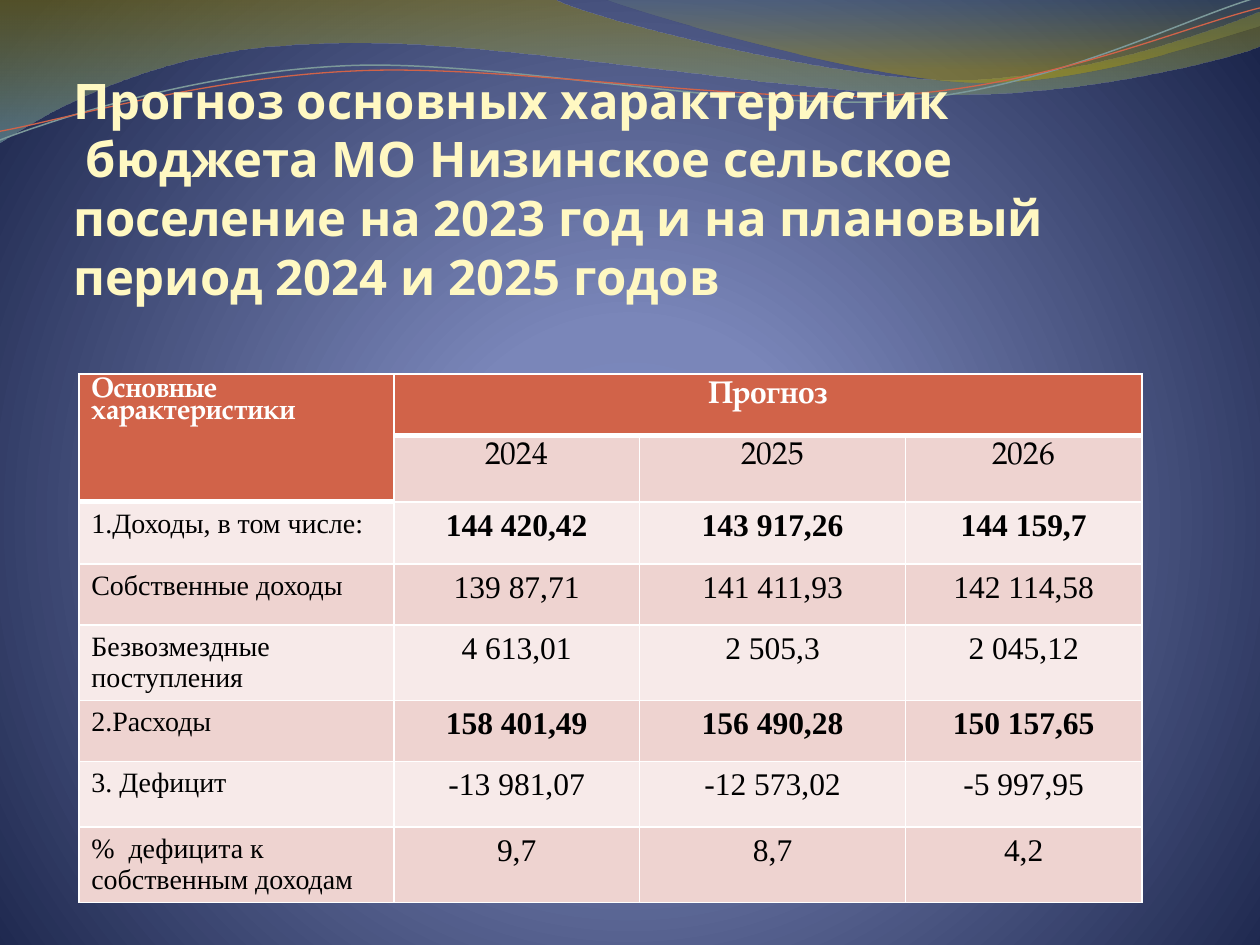
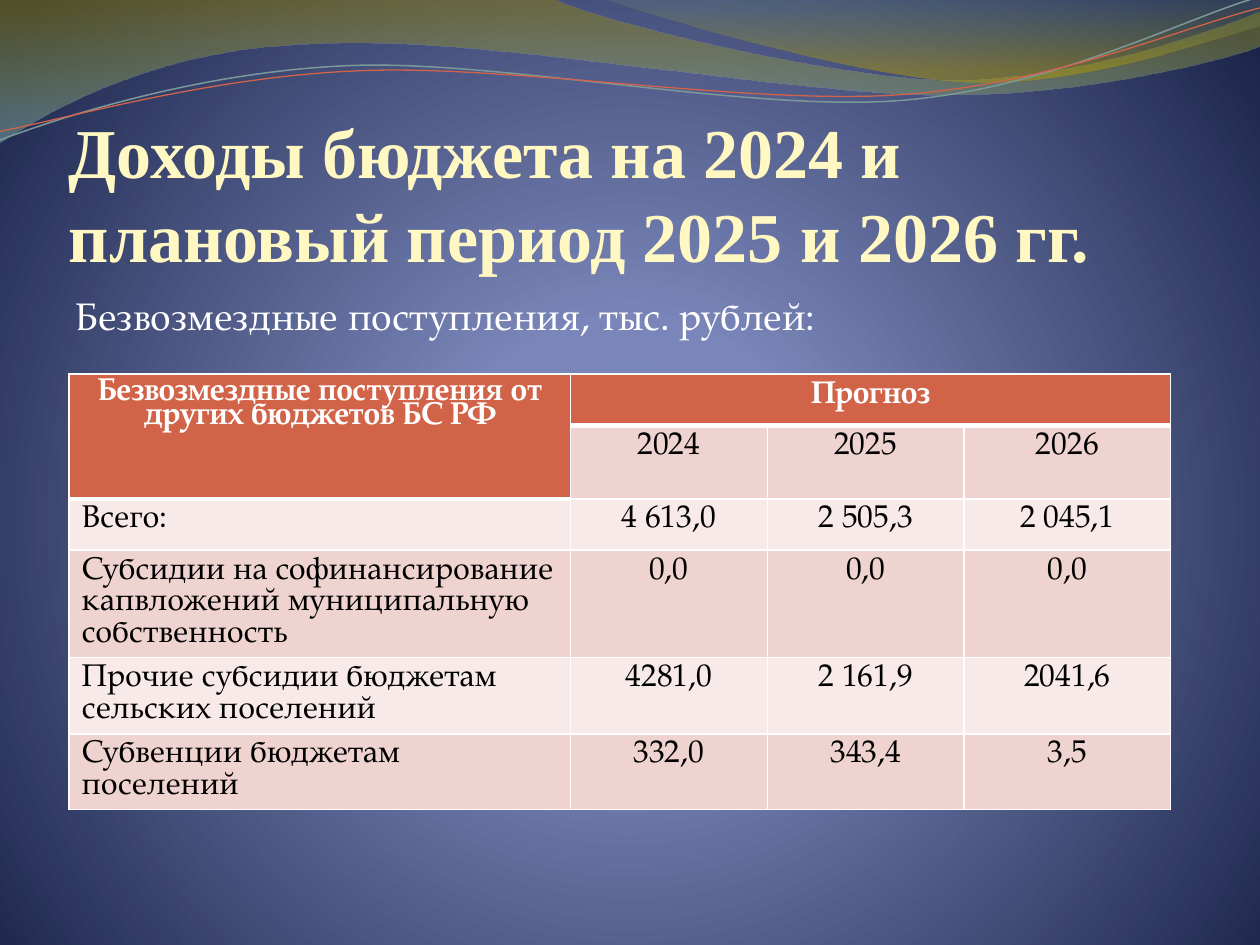
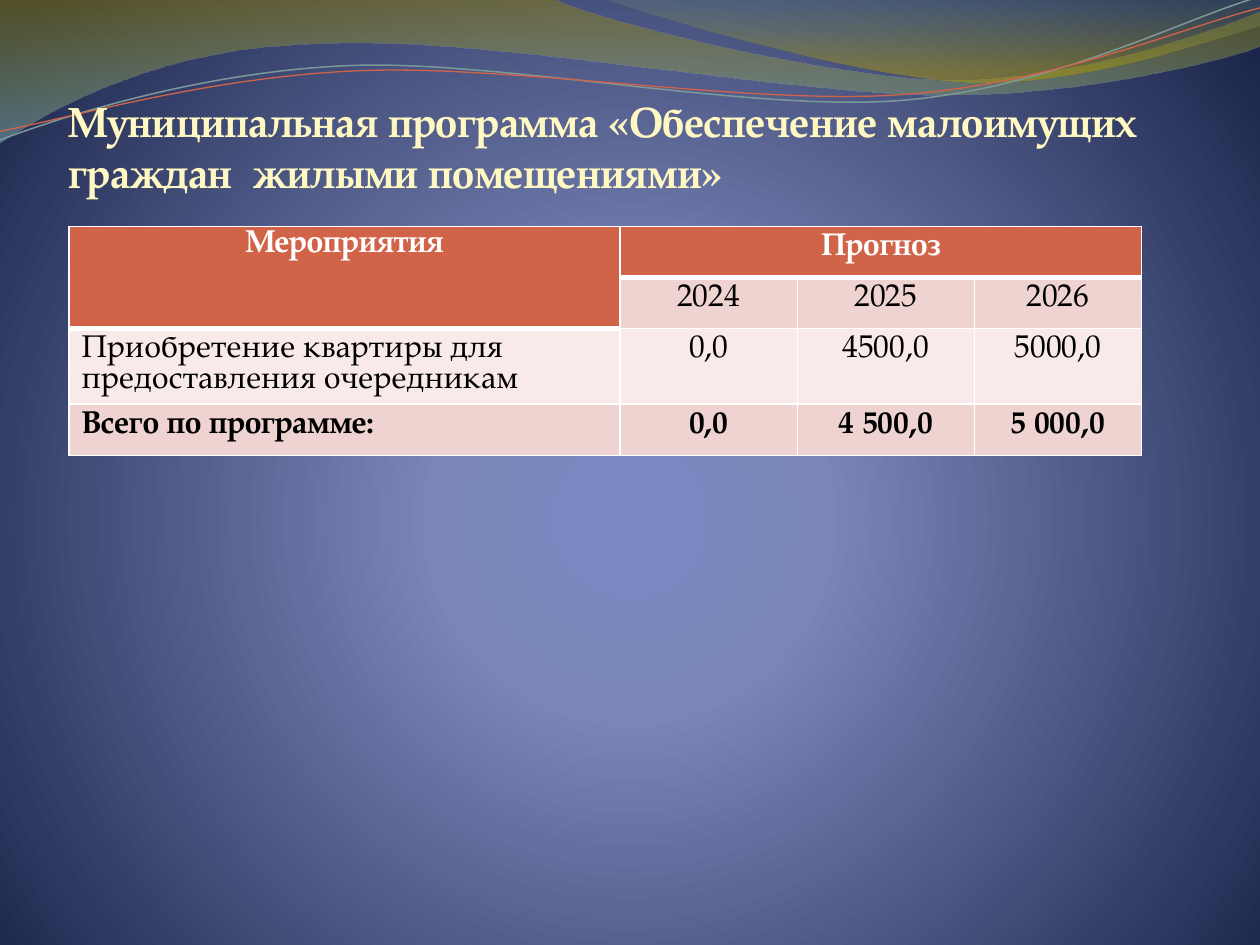
"""Build three budget slides with a shared wave design and forecast tables."""
import lxml.etree
import pptx
import pptx.dml.color
import pptx.enum.text
import pptx.oxml.ns
import pptx.util

Pt = pptx.util.Pt
qn = pptx.oxml.ns.qn
RGBColor = pptx.dml.color.RGBColor
Align = pptx.enum.text.PP_ALIGN
Anchor = pptx.enum.text.MSO_ANCHOR

WHITE = RGBColor(0xFF, 0xFF, 0xFF)
BLACK = RGBColor(0x00, 0x00, 0x00)
CREAM = RGBColor(0xFF, 0xF8, 0xC2)
RUST = RGBColor(0xD1, 0x63, 0x49)
SAGE = RGBColor(0x7C, 0x99, 0x9A)
ROW_TINTS = (RGBColor(0xF7, 0xEA, 0xE9), RGBColor(0xEE, 0xD3, 0xD0))
SKY = [(0, RGBColor(0x7A, 0x88, 0xC3), 100), (25, RGBColor(0x7A, 0x86, 0xB9), 100),
       (100, RGBColor(0x1B, 0x25, 0x4B), 100)]
LONG_BAND = [(0, RGBColor(0x97, 0x85, 0x00), 45), (100, RGBColor(0x77, 0xA5, 0xA6), 55)]
CORNER_BAND = [(0, RGBColor(0x64, 0x84, 0x84), 30), (80, RGBColor(0xB4, 0x9F, 0x00), 45)]

PAGELLA, TIMES, NOTO = "TeX Gyre Pagella", "Times New Roman", "Noto Sans"
YEARS = ["2024", "2025", "2026"]

LONG_BAND_OUTLINE = [
    (0, 0), (317, -0.5), (342.5, 12, 478, 45.5, 546, 45.5), (614, 45.5, 690, 18.5, 720, 6.5),
    (720.5, 26), (708, 31.5, 626.5, 54.5, 537, 54), (448, 54, 275, 20, 185, 24.5),
    (93, 26, 33, 60, -0.5, 81.5)]
CORNER_BAND_OUTLINE = [
    (345, -0.5), (366.5, 8, 491, 44.5, 553.5, 47), (616.5, 49.5, 692, 23, 720, 15), (720, 0)]
SAGE_WAVE = [
    (0, 80), (34.5, 67, 114, 41, 199.5, 37.5), (284.5, 34, 427, 64, 513.5, 57.5),
    (600, 51, 675.5, 11, 718.5, -1.5)]
RUST_WAVE = [
    (0, 75), (34, 69, 118, 44, 204, 40.5), (290, 36.5, 430, 60.5, 516, 54),
    (602, 48, 677.5, 15, 720, 4.5)]


def add_xml(parent, tag, **attributes):
    """Append a child element with the given attributes."""
    child = lxml.etree.SubElement(parent, qn(tag))
    for name, value in attributes.items():
        child.set(name, str(value))
    return child


class Deck:
    """Hold the presentation style and the current slide."""

    def __init__(self):
        """Start a presentation with the shared background."""
        self.presentation = pptx.Presentation()
        self.presentation.slide_width = Pt(720)
        self.presentation.slide_height = Pt(540)
        self.master = self.presentation.slide_master
        self.slide = None
        sky = self.gradient(self.master.background.fill, self.master.element, SKY)
        circle = add_xml(sky, "a:path", path="circle")
        add_xml(circle, "a:fillToRect", l=10000, t=110000, r=10000, b=100000)

    def gradient(self, fill, element, stops):
        """Give a fill the listed gradient stops and return its element."""
        fill.gradient()
        gradient = element.find(f".//{qn('a:gradFill')}")
        for child in list(gradient):
            gradient.remove(child)
        stop_list = add_xml(gradient, "a:gsLst")
        for position, color, opacity in stops:
            stop = add_xml(stop_list, "a:gs", pos=position * 1000)
            color_element = add_xml(stop, "a:srgbClr", val=color)
            if opacity < 100:
                add_xml(color_element, "a:alpha", val=opacity * 1000)
        return gradient

    def add_slide(self, layout_index):
        """Open a new slide."""
        layout = self.presentation.slide_layouts[layout_index]
        self.slide = self.presentation.slides.add_slide(layout)

    def outline(self, outline, closed):
        """Draw an outline of straight and cubic segments."""
        points = [(Pt(segment[index]), Pt(segment[index + 1]))
                  for segment in outline for index in range(0, len(segment), 2)]
        builder = self.slide.shapes.build_freeform(*points[0])
        builder.add_line_segments(points[1:], close=closed)
        shape = builder.convert_to_shape()
        shape.shadow.inherit = False
        steps = iter(list(shape.element.iter(qn("a:lnTo"))))
        for segment in outline[1:]:
            step = next(steps)
            if len(segment) == 6:
                curve = lxml.etree.Element(qn("a:cubicBezTo"))
                step.addprevious(curve)
                for control in (step, next(steps), next(steps)):
                    curve.append(control[0])
                    control.getparent().remove(control)
        return shape

    def band(self, outline, stops):
        """Draw a translucent band shaded from top to bottom."""
        shape = self.outline(outline, True)
        gradient = self.gradient(shape.fill, shape.element, stops)
        add_xml(gradient, "a:lin", ang=5400000, scaled=0)
        shape.line.fill.background()
        return shape

    def wave(self, outline, color, width):
        """Draw a thin wavy line."""
        shape = self.outline(outline, False)
        shape.fill.background()
        shape.line.color.rgb = color
        shape.line.width = Pt(width)
        return shape

    def decorate_master(self):
        """Place the bands and waves behind the master's placeholders."""
        decorations = [
            self.band(LONG_BAND_OUTLINE, LONG_BAND),
            self.band(CORNER_BAND_OUTLINE, CORNER_BAND),
            self.wave(SAGE_WAVE, SAGE, 0.85),
            self.wave(RUST_WAVE, RUST, 0.75)]
        for index, shape in enumerate(decorations):
            shape.element.nvSpPr.cNvPr.set("id", str(100 + index))
            self.master.element.cSld.spTree.insert(2 + index, shape.element)

    def run(self, paragraph, text, size, font, color, bold=False):
        """Add one formatted run."""
        run = paragraph.add_run()
        run.text = text
        run.font.size = Pt(size)
        run.font.name = font
        run.font.color.rgb = color
        run.font.bold = bold

    def place(self, shape, box, inset, anchor):
        """Move a placeholder and return its first paragraph."""
        shape.left, shape.top, shape.width, shape.height = [Pt(length) for length in box]
        frame = shape.text_frame
        frame.word_wrap = True
        frame.auto_size = pptx.enum.text.MSO_AUTO_SIZE.NONE
        frame.vertical_anchor = anchor
        frame.margin_left = frame.margin_right = Pt(inset)
        frame.margin_top = frame.margin_bottom = Pt(inset)
        paragraph = frame.paragraphs[0]
        paragraph.alignment = Align.LEFT
        return paragraph

    def title(self, lines, box, size, font):
        """Fill the title placeholder."""
        paragraph = self.place(self.slide.shapes.title, box, 0, Anchor.BOTTOM)
        paragraph.line_spacing = Pt(round(1.2 * size, 1))
        for index, line in enumerate(lines):
            if index:
                paragraph.add_line_break()
            self.run(paragraph, line, size, font, CREAM, True)

    def body(self, text, box):
        """Fill the body placeholder with an unbulleted paragraph."""
        paragraph = self.place(self.slide.placeholders[1], box, 3.6, Anchor.TOP)
        paragraph.space_before = Pt(4.4)
        properties = paragraph._p.get_or_add_pPr()
        properties.set("marL", "0")
        properties.set("indent", "0")
        add_xml(properties, "a:buNone")
        self.run(paragraph, text, 22, PAGELLA, WHITE)

    def borders(self, cell, top, bottom):
        """Draw white borders of the given widths around a cell."""
        properties = cell._tc.get_or_add_tcPr()
        for tag, width in (("a:lnL", 1), ("a:lnR", 1), ("a:lnT", top), ("a:lnB", bottom)):
            line = add_xml(properties, tag, w=Pt(width))
            add_xml(add_xml(line, "a:solidFill"), "a:srgbClr", val=WHITE)

    def table(self, position, widths, heights, heading, rows, label_size=18, font=PAGELLA,
              heading_alignment=Align.CENTER, bold_labels=(), bold_values=()):
        """Add a forecast table under a two-row header."""
        grid = [[heading, "Прогноз", "", ""], ["", *YEARS], *rows]
        left, top = position
        table = self.slide.shapes.add_table(
            len(grid), len(widths), Pt(left), Pt(top), Pt(sum(widths)), Pt(sum(heights))).table
        for column, width in zip(table.columns, widths):
            column.width = Pt(width)
        for row, height in zip(table.rows, heights):
            row.height = Pt(height)
        for row_index, texts in enumerate(grid):
            for column_index, text in enumerate(texts):
                cell = table.cell(row_index, column_index)
                is_label = column_index == 0
                is_header = row_index == 0 or (row_index == 1 and is_label)
                below_header = row_index == (2 if is_label else 1)
                self.borders(cell, 3 if below_header else 1, 3 if is_header else 1)
                cell.fill.solid()
                cell.fill.fore_color.rgb = RUST if is_header else ROW_TINTS[row_index % 2]
                cell.margin_bottom = Pt(2.5)
                if not text:
                    continue
                size = label_size if is_label else 18
                cell_font = PAGELLA if row_index < 2 else font
                paragraph = cell.text_frame.paragraphs[0]
                paragraph.alignment = Align.LEFT if is_label else Align.CENTER
                if cell_font == PAGELLA:
                    paragraph.line_spacing = Pt(size)
                if is_header and is_label:
                    paragraph.alignment = heading_alignment
                    paragraph.line_spacing = 0.8
                bold = is_header or row_index in (bold_labels if is_label else bold_values)
                self.run(paragraph, text, size, cell_font, WHITE if is_header else BLACK, bold)
        table.cell(0, 0).merge(table.cell(1, 0))
        table.cell(0, 1).merge(table.cell(0, 3))


def main():
    """Build and save the slides."""
    deck = Deck()

    deck.add_slide(5)
    deck.decorate_master()
    deck.title(
        ["Прогноз основных характеристик",
         " бюджета МО Низинское сельское поселение на 2023 год и на плановый период "
         "2024 и 2025 годов"],
        (41.8, 28.4, 600, 146), 28, NOTO)
    deck.table(
        (45, 213.8), [180, 140.5, 152, 135], [35, 38, 35.5, 35, 43, 35, 37.5, 43],
        "Основные характеристики",
        [["1.Доходы, в том числе:", "144 420,42", "143 917,26", "144 159,7"],
         ["Собственные доходы", "139 87,71", "141 411,93", "142 114,58"],
         ["Безвозмездные поступления", "4 613,01", "2 505,3", "2 045,12"],
         ["2.Расходы", "158 401,49", "156 490,28", "150 157,65"],
         ["3. Дефицит", "-13 981,07", "-12 573,02", "-5 997,95"],
         ["%  дефицита к собственным доходам", "9,7", "8,7", "4,2"]],
        label_size=16, font=TIMES, heading_alignment=Align.LEFT, bold_values=(2, 5))

    deck.add_slide(1)
    deck.title(["Доходы бюджета на 2024 и плановый период 2025 и 2026 гг."],
               (39.3, 50.6, 612, 107.3), 40, TIMES)
    deck.body("Безвозмездные поступления, тыс. рублей:", (39.5, 163.4, 612, 118.8))
    deck.table(
        (39.5, 213.8), [286.5, 112.5, 112.5, 118], [29.3, 42, 29.3, 61.5, 43.5, 43.3],
        "Безвозмездные поступления от других бюджетов БС РФ",
        [["Всего:", "4 613,0", "2 505,3", "2 045,1"],
         ["Субсидии на софинансирование капвложений муниципальную собственность",
          "0,0", "0,0", "0,0"],
         ["Прочие субсидии бюджетам сельских поселений", "4281,0", "2 161,9", "2041,6"],
         ["Субвенции бюджетам поселений", "332,0", "343,4", "3,5"]])

    deck.add_slide(5)
    deck.title(["Муниципальная программа «Обеспечение малоимущих граждан  жилыми помещениями»"],
               (39.3, 56.2, 612, 56.2), 24, PAGELLA)
    deck.table(
        (39.4, 129.3), [315, 101.2, 101.2, 95.5], [29.2, 29.2, 43.3, 29.2],
        "Мероприятия",
        [["Приобретение квартиры для предоставления очередникам", "0,0", "4500,0", "5000,0"],
         ["Всего по программе:", "0,0", "4 500,0", "5 000,0"]],
        bold_labels=(3,), bold_values=(3,))

    deck.presentation.save("out.pptx")


if __name__ == "__main__":
    main()
